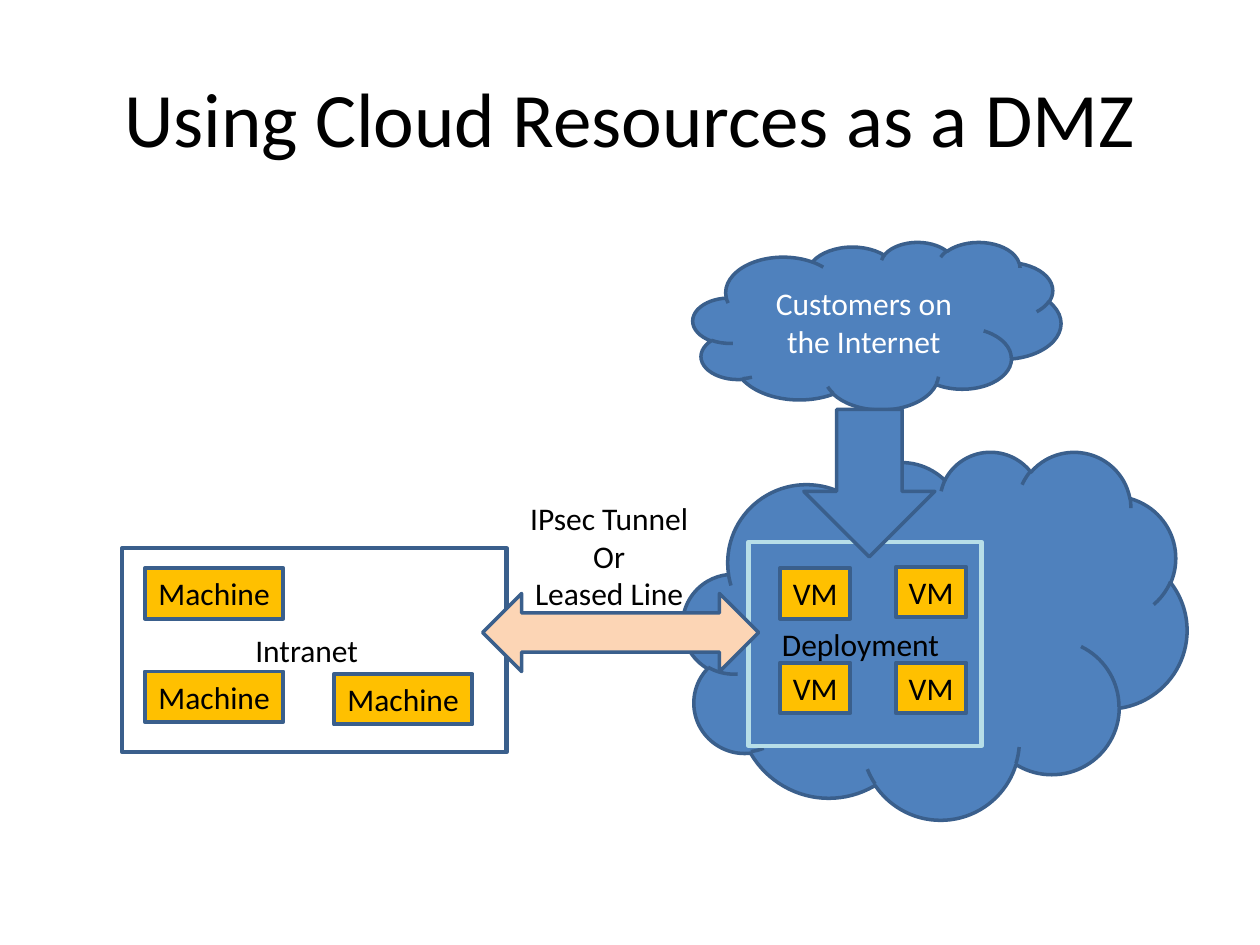
from pptx import Presentation
from pptx.dml.color import RGBColor
from pptx.enum.shapes import MSO_SHAPE
from pptx.enum.text import MSO_ANCHOR, PP_ALIGN
from pptx.util import Inches, Pt

RECTANGLE = MSO_SHAPE.RECTANGLE
CLOUD = MSO_SHAPE.CLOUD
DOWN_ARROW = MSO_SHAPE.DOWN_ARROW
TWO_WAY_ARROW = MSO_SHAPE.LEFT_RIGHT_ARROW
MIDDLE, TOP = MSO_ANCHOR.MIDDLE, MSO_ANCHOR.TOP
CENTER = PP_ALIGN.CENTER

FONT = "Calibri"
COLORS = {
    "text": "000000",
    "light_text": "FFFFFF",
    "outline": "3A5F8C",
    "cloud": "4F81BD",
    "node": "FFC000",
    "tunnel": "FCD5B5",
    "deployment": "B7DEE8",
}


def color(name):
    return RGBColor.from_string(COLORS[name])


def write(shape, lines, size=18, ink="text", anchor=MIDDLE, wrap=True):
    """Put centred lines of text into a shape."""
    frame = shape.text_frame
    frame.text = "\n".join(lines)
    frame.word_wrap = wrap
    frame.vertical_anchor = anchor
    for para in frame.paragraphs:
        para.alignment = CENTER
        para.font.name = FONT
        para.font.size = Pt(size)
        para.font.color.rgb = color(ink)


def add_figure(page, kind, box, fill=None, line="outline", width=2):
    """Add a preset shape; box is left, top, width, height in inches."""
    shape = page.shapes.add_shape(kind, *map(Inches, box))
    shape.shadow.inherit = False
    if fill:
        shape.fill.solid()
        shape.fill.fore_color.rgb = color(fill)
    else:
        shape.fill.background()
    shape.line.color.rgb = color(line)
    shape.line.width = Pt(width)
    return shape


def add_nodes(page, box, label, width, offsets):
    """Add equal labelled nodes at offsets from the corner of the box."""
    left, top = box[:2]
    for across, down in offsets:
        node = add_figure(page, RECTANGLE, (left + across, top + down, width, 0.4),
                          "node", width=2.25)
        write(node, [label], wrap=False)


def add_frame(page, box, label, line, right_inset):
    """Add an unfilled frame with its label in the middle."""
    frame = add_figure(page, RECTANGLE, box, line=line, width=2.5)
    write(frame, [label])
    frame.text_frame.margin_right = Inches(right_inset)


def add_title(page, box):
    title = page.shapes.title
    title.left, title.top, title.width, title.height = map(Inches, box)
    write(title, ["Using Cloud Resources as a DMZ"], size=44)


def add_intranet(page, box):
    add_frame(page, box, "Intranet", "outline", 0.22)
    add_nodes(page, box, "Machine", 1.1, [(0.18, 0.16), (0.18, 0.98), (1.68, 1)])


def add_cloud_deployment(page, box):
    left, top = box[:2]
    add_figure(page, CLOUD, box, "cloud")
    deployment = (left + 0.52, top + 0.72, 1.85, 1.62)
    add_nodes(page, deployment, "VM", 0.56,
              [(0.25, 0.21), (0.25, 0.96), (1.17, 0.96), (1.17, 0.2)])
    add_frame(page, deployment, "Deployment", "deployment", 0.17)


def add_tunnel(page, box):
    left, top = box[:2]
    add_figure(page, TWO_WAY_ARROW, box, "tunnel")
    label = page.shapes.add_textbox(
        *map(Inches, (left - 0.08, top - 0.8, 2.17, 1.01)))
    write(label, ["IPsec Tunnel", "Or", "Leased Line"], anchor=TOP)


def add_customers(page, box):
    left, top, _, height = box
    cloud = add_figure(page, CLOUD, box, "cloud")
    write(cloud, ["Customers on the Internet"], ink="light_text")
    add_figure(page, DOWN_ARROW, (left + 0.88, top + height, 1.04, 1.17), "cloud")


def main():
    deck = Presentation()
    deck.slide_width, deck.slide_height = Inches(10), Inches(7.5)
    page = deck.slides.add_slide(deck.slide_layouts[5])

    add_title(page, (0.5, 0.3, 9, 1.25))
    add_intranet(page, (0.97, 4.35, 3.05, 1.62))
    add_cloud_deployment(page, (5.42, 3.58, 4, 2.92))
    add_tunnel(page, (3.83, 4.71, 2.19, 0.62))
    add_customers(page, (5.5, 1.92, 2.92, 1.33))

    deck.save("out.pptx")


if __name__ == "__main__":
    main()
